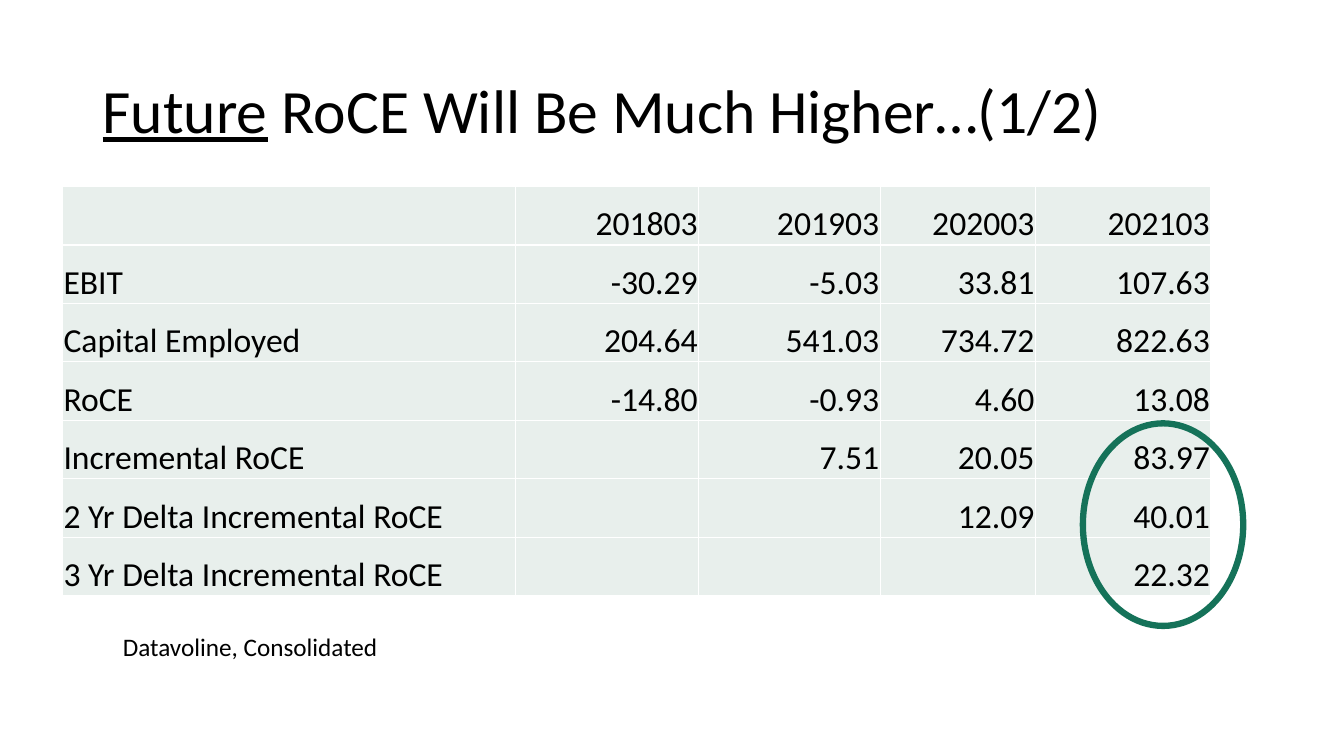
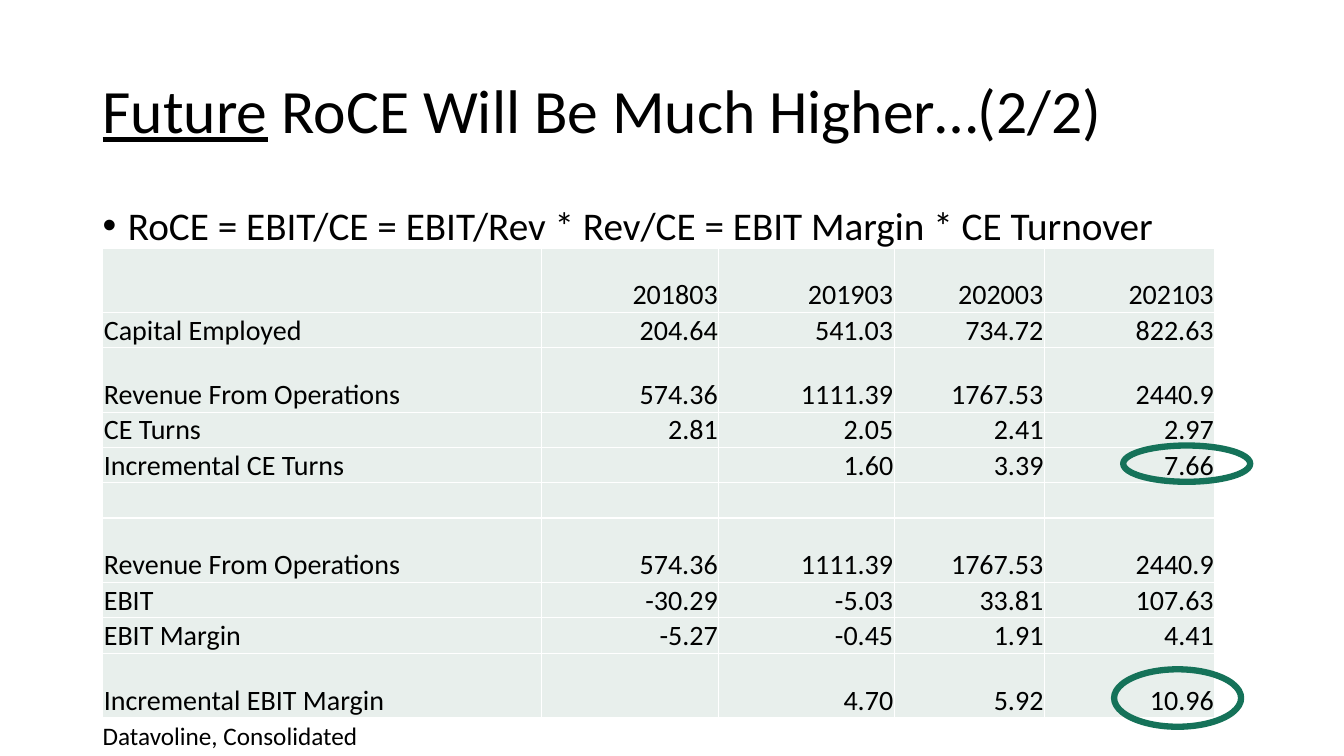
from pptx import Presentation
from pptx.dml.color import RGBColor
from pptx.enum.shapes import MSO_SHAPE
from pptx.enum.text import MSO_ANCHOR, PP_ALIGN
from pptx.oxml.xmlchemy import OxmlElement
from pptx.util import Inches, Pt

OVAL = MSO_SHAPE.OVAL
TOP, MIDDLE, BOTTOM = MSO_ANCHOR.TOP, MSO_ANCHOR.MIDDLE, MSO_ANCHOR.BOTTOM
LEFT, RIGHT = PP_ALIGN.LEFT, PP_ALIGN.RIGHT

YEARS = ["", "201803", "201903", "202003", "202103"]
EBIT = ["EBIT", "-30.29", "-5.03", "33.81", "107.63"]
CAPITAL = ["Capital Employed", "204.64", "541.03", "734.72", "822.63"]
REVENUE = ["Revenue From Operations", "574.36", "1111.39", "1767.53", "2440.9"]

ROCE_ROWS = [
    YEARS,
    EBIT,
    CAPITAL,
    ["RoCE", "-14.80", "-0.93", "4.60", "13.08"],
    ["Incremental RoCE", "", "7.51", "20.05", "83.97"],
    ["2 Yr Delta Incremental RoCE", "", "", "12.09", "40.01"],
    ["3 Yr Delta Incremental RoCE", "", "", "", "22.32"],
]
DRIVER_ROWS = [
    YEARS,
    CAPITAL,
    REVENUE,
    ["CE Turns", "2.81", "2.05", "2.41", "2.97"],
    ["Incremental CE Turns", "", "1.60", "3.39", "7.66"],
    [""] * 5,
    REVENUE,
    EBIT,
    ["EBIT Margin", "-5.27", "-0.45", "1.91", "4.41"],
    ["Incremental EBIT Margin", "", "4.70", "5.92", "10.96"],
]
TALL, SHORT = 0.64, 0.35
DRIVER_HEIGHTS = [TALL, SHORT, TALL, SHORT, SHORT, SHORT, TALL, SHORT, SHORT, TALL]


def rgb(value):
    return RGBColor.from_string(value)


def add_xml(parent, tag, **attrs):
    child = OxmlElement(tag)
    for name, value in attrs.items():
        child.set(name, value)
    parent.append(child)
    return child


class Deck:
    FONT = "Calibri"
    TEXT, CELL, GRID, ACCENT = "000000", "E8EFEC", "FFFFFF", "157259"

    def __init__(self):
        self.prs = Presentation()
        self.prs.slide_width, self.prs.slide_height = Inches(13.33), Inches(7.5)
        self.s = None

    def new_slide(self, page):
        self.s = self.prs.slides.add_slide(self.prs.slide_layouts[6])
        p = self.text_box(0.92, 0.4, 11.5, 1.45, MIDDLE)
        p.line_spacing = 0.9
        self.run(p, "Future", size=Pt(44), underline=True)
        self.run(p, f" RoCE Will Be Much Higher…({page}/2)", size=Pt(44))

    def run(self, p, text, **fmt):
        r = p.add_run()
        r.text = text
        for name, value in {"name": self.FONT, **fmt}.items():
            setattr(r.font, name, value)
        r.font.color.rgb = rgb(self.TEXT)

    def text_box(self, x, y, w, h, anchor=TOP):
        sp = self.s.shapes.add_textbox(Inches(x), Inches(y), Inches(w), Inches(h))
        tf = sp.text_frame
        tf.word_wrap = True
        tf.vertical_anchor = anchor
        return tf.paragraphs[0]

    def bullet(self, x, y, w, h, text):
        p = self.text_box(x, y, w, h)
        p.line_spacing = 0.9
        pPr = p._p.get_or_add_pPr()
        indent = Inches(0.25)
        pPr.set("marL", str(indent))
        pPr.set("indent", str(-indent))
        add_xml(pPr, "a:buFont", typeface="Arial")
        add_xml(pPr, "a:buChar", char="•")
        self.run(p, text, size=Pt(28))

    def source(self, x, y):
        p = self.text_box(x, y, 7.53, 0.4)
        self.run(p, "Datavoline, Consolidated", size=Pt(18))

    def table(self, x, y, widths, heights, rows, size):
        frame = self.s.shapes.add_table(
            len(rows), len(widths), Inches(x), Inches(y),
            Inches(sum(widths)), Inches(sum(heights)))
        table = frame.table
        table.first_row = table.horz_banding = False
        for column, width in zip(table.columns, widths):
            column.width = Inches(width)
        for row, height, values in zip(table.rows, heights, rows):
            row.height = Inches(height)
            for i, (cell, value) in enumerate(zip(row.cells, values)):
                self.cell(cell, value, LEFT if i == 0 else RIGHT, size)

    def cell(self, cell, value, align, size):
        margin = Inches(0.01)
        fmt = {"margin_left": margin, "margin_right": margin, "margin_top": margin,
               "margin_bottom": 0, "vertical_anchor": BOTTOM}
        for name, setting in fmt.items():
            setattr(cell, name, setting)
        # Borders come before the fill in the cell properties
        tcPr = cell._tc.get_or_add_tcPr()
        for side in "LRTB":
            ln = add_xml(tcPr, f"a:ln{side}", w=str(Pt(1)))
            add_xml(add_xml(ln, "a:solidFill"), "a:srgbClr", val=self.GRID)
        cell.fill.solid()
        cell.fill.fore_color.rgb = rgb(self.CELL)
        if value:
            p = cell.text_frame.paragraphs[0]
            p.alignment = align
            self.run(p, value, size=Pt(size))

    def highlight(self, x, y, w, h):
        sp = self.s.shapes.add_shape(OVAL, Inches(x), Inches(y), Inches(w), Inches(h))
        sp.shadow.inherit = False
        sp.fill.background()
        sp.line.color.rgb = rgb(self.ACCENT)
        sp.line.width = Pt(4.5)


def main():
    deck = Deck()

    # Incremental returns
    deck.new_slide(1)
    deck.table(0.62, 1.85, [4.49, 1.82, 1.8, 1.54, 1.74],
               [0.58] * len(ROCE_ROWS), ROCE_ROWS, 24)
    deck.source(1.12, 6.21)
    deck.highlight(10.74, 4.2, 1.59, 2.01)

    # Drivers: turnover and margin
    deck.new_slide(2)
    deck.bullet(0.92, 2, 11.5, 0.6,
                "RoCE = EBIT/CE = EBIT/Rev * Rev/CE = EBIT Margin * CE Turnover")
    deck.table(1.02, 2.46, [4.35, 1.76, 1.74, 1.49, 1.69],
               DRIVER_HEIGHTS, DRIVER_ROWS, 20)
    deck.highlight(11.05, 6.64, 1.26, 0.57)
    deck.highlight(11.14, 4.42, 1.26, 0.36)
    deck.source(0.92, 7.1)

    deck.prs.save("out.pptx")


if __name__ == "__main__":
    main()
